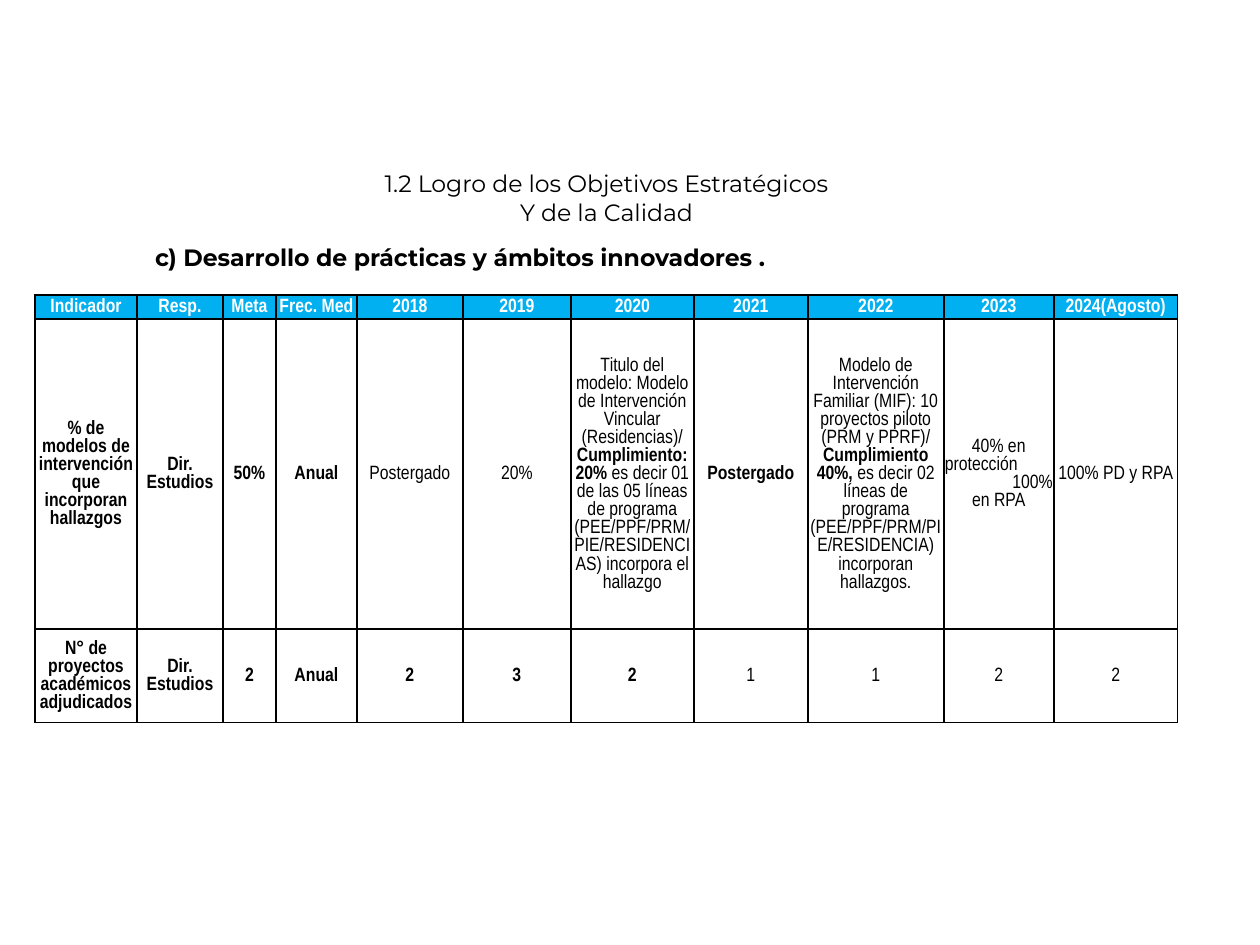
from dataclasses import dataclass
from typing import Any

import pptx
import pptx.dml.color
import pptx.enum.text
import pptx.oxml
import pptx.oxml.ns
import pptx.util

EMU_PER_PX = 914400 / 126
ALIGN = pptx.enum.text.PP_ALIGN
MIDDLE = pptx.enum.text.MSO_ANCHOR.MIDDLE


@dataclass(frozen=True)
class Theme:
    black: str = "000000"
    white: str = "FFFFFF"
    header: str = "00B0F0"
    heading_font: str = "Montserrat"
    table_font: str = "Arial Narrow"
    heading_size: float = 13.5
    table_size: float = 11
    border_width: float = 1


@dataclass(frozen=True)
class Run:
    text: str
    bold: bool = False


@dataclass(frozen=True)
class Para:
    runs: tuple[Run, ...]
    align: Any = ALIGN.CENTER


@dataclass(frozen=True)
class Box:
    left: int
    top: int
    width: int
    height: int


THEME = Theme()
TITLE_BOX = Box(163, 159, 887, 77)
SUBTITLE_BOX = Box(136, 219, 762, 77)
TABLE_LEFT, TABLE_TOP = 35, 295
COLUMN_WIDTHS = (102, 86, 53, 81, 106, 108, 123, 114, 136, 110, 124)
ROW_HEIGHTS = (24, 310, 93)


def px(value: int) -> int:
    return pptx.util.Emu(round(value * EMU_PER_PX))


def rgb(value: str) -> Any:
    return pptx.dml.color.RGBColor.from_string(value)


def set_all(target: Any, values: dict[str, Any]) -> None:
    for name, value in values.items():
        setattr(target, name, value)


def line(text: str, bold: bool = False, align: Any = ALIGN.CENTER) -> Para:
    return Para((Run(text, bold),), align)


def place(shape: Any, box: Box) -> None:
    set_all(shape, {"left": px(box.left), "top": px(box.top),
                    "width": px(box.width), "height": px(box.height)})


def write(tf: Any, paras: list[Para], font: str, size: float, color: str) -> None:
    for i, para in enumerate(paras):
        p = tf.paragraphs[0] if i == 0 else tf.add_paragraph()
        p.alignment = para.align
        for run in para.runs:
            r = p.add_run()
            r.text = run.text
            set_all(r.font, {"name": font, "size": pptx.util.Pt(size), "bold": run.bold})
            r.font.color.rgb = rgb(color)


def write_heading(shape: Any, box: Box, paras: list[Para]) -> None:
    place(shape, box)
    set_all(shape.text_frame, {"word_wrap": True, "vertical_anchor": MIDDLE})
    write(shape.text_frame, paras, THEME.heading_font, THEME.heading_size, THEME.black)


def add_borders(cell: Any) -> None:
    tc_pr = cell._tc.get_or_add_tcPr()
    width = pptx.util.Pt(THEME.border_width)
    for i, side in enumerate(("lnL", "lnR", "lnT", "lnB")):
        tc_pr.insert(i, pptx.oxml.parse_xml(
            f'<a:{side} {pptx.oxml.ns.nsdecls("a")} w="{int(width)}"><a:solidFill>'
            f'<a:srgbClr val="{THEME.black}"/></a:solidFill></a:{side}>'))


def format_cell(cell: Any, paras: list[Para], fill: str, color: str) -> None:
    set_all(cell, {"margin_left": px(1), "margin_right": px(1), "margin_top": px(1),
                   "margin_bottom": 0, "vertical_anchor": MIDDLE})
    cell.fill.solid()
    cell.fill.fore_color.rgb = rgb(fill)
    add_borders(cell)
    write(cell.text_frame, paras, THEME.table_font, THEME.table_size, color)


def add_indicator_table(s: Any, rows: list[list[list[Para]]]) -> None:
    table = s.shapes.add_table(
        len(rows), len(COLUMN_WIDTHS), px(TABLE_LEFT), px(TABLE_TOP),
        px(sum(COLUMN_WIDTHS)), px(sum(ROW_HEIGHTS))).table
    table.horz_banding = False
    for column, width in zip(table.columns, COLUMN_WIDTHS):
        column.width = px(width)
    for i, (row, height) in enumerate(zip(rows, ROW_HEIGHTS)):
        table.rows[i].height = px(height)
        fill, color = (THEME.header, THEME.white) if i == 0 else (THEME.white, THEME.black)
        for j, paras in enumerate(row):
            format_cell(table.cell(i, j), paras, fill, color)


def bold_cells(*texts: str) -> list[list[Para]]:
    return [[line(text, True)] for text in texts]


def plain_cells(*texts: str) -> list[list[Para]]:
    return [[line(text)] for text in texts]


HEADER = bold_cells("Indicador", "Resp.", "Meta", "Frec. Med", "2018", "2019", "2020",
                    "2021", "2022", "2023", "2024(Agosto)")
MODEL_2020 = Para((
    Run("Titulo del modelo: Modelo de Intervención Vincular (Residencias)/ "),
    Run("Cumplimiento: 20% ", True),
    Run("es decir 01 de las 05 líneas de programa "
        "(PEE/PPF/PRM/PIE/RESIDENCIAS) incorpora el hallazgo")))
MODEL_2022 = Para((
    Run("Modelo de Intervención Familiar (MIF): 10 proyectos piloto (PRM y PPRF)/ "),
    Run("Cumplimiento 40%, ", True),
    Run("es decir 02 líneas de programa "
        "(PEE/PPF/PRM/PIE/RESIDENCIA) incorporan hallazgos.")))
MODELS_2023 = [line("40% en"), line("protección", align=ALIGN.LEFT),
               line("100%", align=ALIGN.RIGHT), line("en RPA")]
MODELS = [
    *bold_cells("% de modelos de intervención que incorporan hallazgos",
                "Dir. Estudios", "50%", "Anual"),
    *plain_cells("Postergado", "20%"),
    [MODEL_2020], *bold_cells("Postergado"), [MODEL_2022], MODELS_2023,
    *plain_cells("100% PD y RPA"),
]
PROJECTS = [
    *bold_cells("N° de proyectos académicos adjudicados", "Dir. Estudios", "2", "Anual",
                "2", "3", "2"),
    *plain_cells("1", "1", "2", "2"),
]


def main() -> None:
    prs = pptx.Presentation()
    set_all(prs, {"slide_width": px(1260), "slide_height": px(945)})
    s = prs.slides.add_slide(prs.slide_layouts[5])
    write_heading(s.shapes.title, TITLE_BOX,
                  [line("1.2 Logro de los Objetivos Estratégicos"), line("Y de la Calidad")])
    subtitle = s.shapes.add_textbox(0, 0, 0, 0)
    subtitle.text_frame.margin_left = px(19)
    write_heading(subtitle, SUBTITLE_BOX,
                  [line("c) Desarrollo de prácticas y ámbitos innovadores .", True, ALIGN.LEFT)])
    add_indicator_table(s, [HEADER, MODELS, PROJECTS])
    prs.save("out.pptx")


if __name__ == "__main__":
    main()
